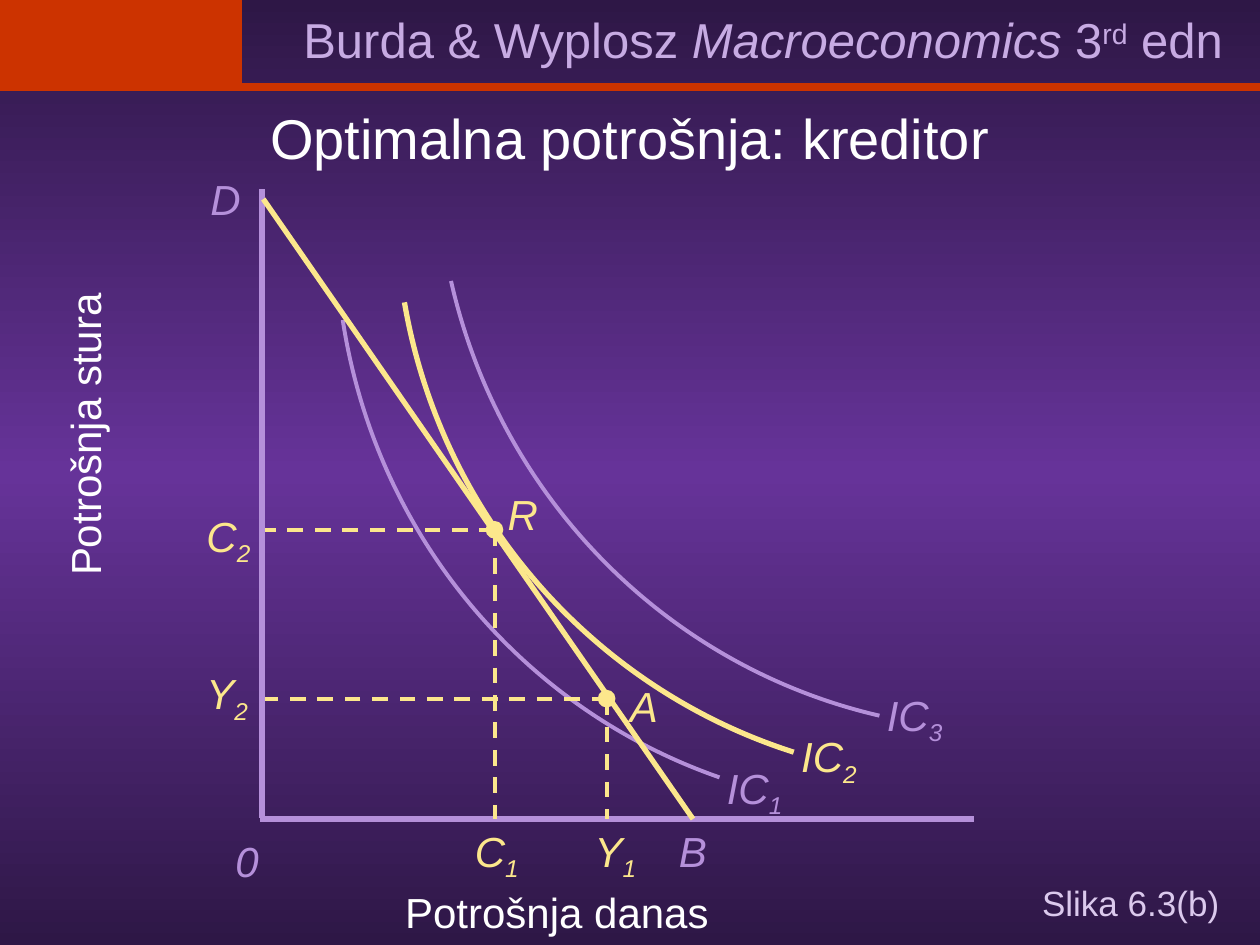
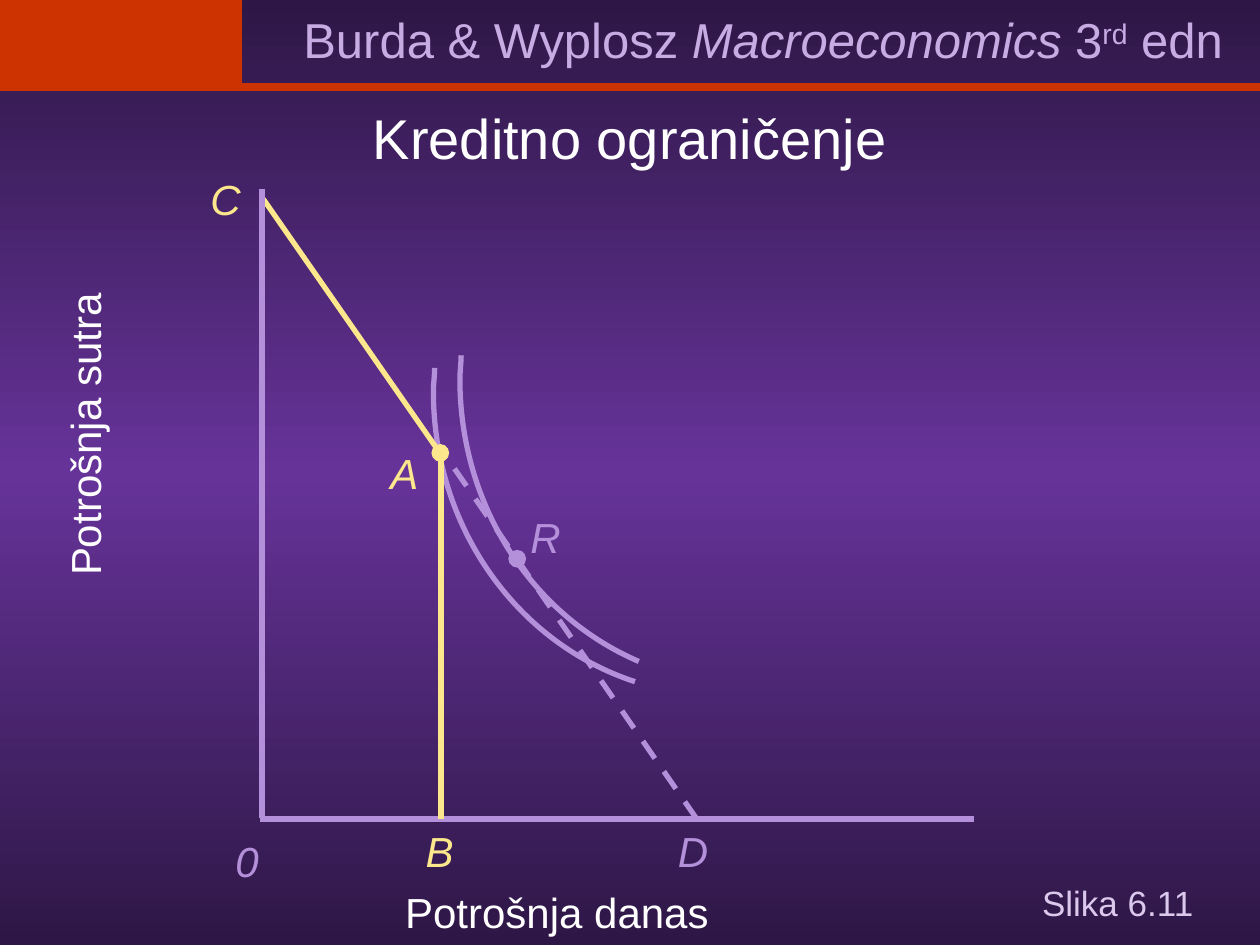
from copy import deepcopy

from lxml.etree import SubElement
from pptx import Presentation
from pptx.dml.color import RGBColor
from pptx.enum.dml import MSO_LINE
from pptx.enum.shapes import MSO_CONNECTOR, MSO_SHAPE
from pptx.enum.text import MSO_ANCHOR, PP_ALIGN
from pptx.oxml.ns import qn
from pptx.util import Inches, Pt

DARK_PURPLE = RGBColor(0x2E, 0x17, 0x46)
PURPLE = RGBColor(0x66, 0x33, 0x99)
LILAC = RGBColor(0xB5, 0x90, 0xDA)
HEADER_LILAC = RGBColor(0xC7, 0xAB, 0xE3)
PALE_LILAC = RGBColor(0xDB, 0xC9, 0xED)
YELLOW = RGBColor(0xFC, 0xE7, 0x8C)
RED = RGBColor(0xCC, 0x33, 0x00)
WHITE = RGBColor(0xFF, 0xFF, 0xFF)

HEADER = {"name": "Arial", "size": Pt(28), "color": HEADER_LILAC}
HEADING = {"name": "Arial", "size": Pt(32), "color": WHITE}
AXIS_NAME = {**HEADING, "size": Pt(24)}
FIGURE_NUMBER = {"name": "Arial", "size": Pt(20), "color": PALE_LILAC}
LABEL = {"name": "Arial", "size": Pt(24), "italic": True}


def place(shape, left, top, width, height):
    frame = {"left": left, "top": top, "width": width, "height": height}
    for name, value in frame.items():
        setattr(shape, name, Inches(value))


def add_span(para, text, style, baseline=0):
    span = para.add_run()
    span.text = text
    for name, value in style.items():
        if name == "color":
            span.font.color.rgb = value
        else:
            setattr(span.font, name, value)
    if baseline:
        span._r.get_or_add_rPr().set("baseline", str(baseline * 1000))


def add_box(page, area, align=PP_ALIGN.CENTER, anchor=MSO_ANCHOR.TOP):
    box = page.shapes.add_textbox(*map(Inches, area))
    box.text_frame.word_wrap = True
    box.text_frame.vertical_anchor = anchor
    box.text_frame.paragraphs[0].alignment = align
    return box


def add_label(page, text, left, top, color, width=0.58, align=PP_ALIGN.CENTER):
    letter, _, index = text.partition("_")
    if index:
        align = PP_ALIGN.LEFT
    box = add_box(page, (left, top, width, 0.5), align)
    para = box.text_frame.paragraphs[0]
    add_span(para, letter, {**LABEL, "color": color})
    if index:
        add_span(para, index, {**LABEL, "color": color}, -25)


def add_line(page, start, end, color, weight=3, dashed=False):
    line = page.shapes.add_connector(
        MSO_CONNECTOR.STRAIGHT, *map(Inches, (*start, *end)))
    line.line.color.rgb = color
    line.line.width = Pt(weight)
    if dashed:
        line.line.dash_style = MSO_LINE.DASH
    SubElement(line.element.spPr, qn("a:effectLst"))
    return line


def add_curve(page, points, color, weight=3):
    start, *rest = [tuple(map(Inches, point)) for point in points]
    builder = page.shapes.build_freeform(*start)
    builder.add_line_segments(rest, close=False)
    curve = builder.convert_to_shape()
    curve.shadow.inherit = False
    curve.fill.background()
    curve.line.color.rgb = color
    curve.line.width = Pt(weight)
    outline = next(curve.element.iter(qn("a:path")))
    segments = outline.findall(qn("a:lnTo"))
    for first in range(0, len(segments), 3):
        bezier = SubElement(outline, qn("a:cubicBezTo"))
        for segment in segments[first:first + 3]:
            bezier.append(segment[0])
            outline.remove(segment)


def add_solid(page, kind, area, color):
    solid = page.shapes.add_shape(kind, *map(Inches, area))
    solid.shadow.inherit = False
    solid.fill.solid()
    solid.fill.fore_color.rgb = color
    solid.line.fill.background()
    return solid


def add_dot(page, left, top, color):
    dot = add_solid(page, MSO_SHAPE.OVAL, (left, top, 0.13, 0.13), color)
    dot.line.color.rgb = color
    dot.line.width = Pt(0.75)


def add_header(page):
    header = add_box(page, (2.31, 0.03, 7.67, 0.57), PP_ALIGN.LEFT)
    para = header.text_frame.paragraphs[0]
    add_span(para, "Burda & Wyplosz ", HEADER)
    add_span(para, "Macroeconomics", {**HEADER, "italic": True})
    add_span(para, " 3", HEADER)
    add_span(para, "rd", HEADER, 30)
    add_span(para, " edn", HEADER)
    return header


def dress_layout(layout, page):
    fill = layout.background.fill
    fill.gradient()
    fill.gradient_angle = 90
    stops = next(layout.element.iter(qn("a:gsLst")))
    stops.append(deepcopy(stops[0]))
    colors = (DARK_PURPLE, PURPLE, DARK_PURPLE)
    for number, (stop, color) in enumerate(zip(fill.gradient_stops, colors)):
        stop.position = number / 2
        stop.color.rgb = color
    band = add_line(page, (0, 0.69), (10, 0.69), RED, 4.5)
    corner = add_solid(page, MSO_SHAPE.RECTANGLE, (0, 0, 1.92, 0.67), RED)
    for shape in (band, add_header(page), corner):
        layout.shapes.element.append(shape.element)


def add_frame(page, heading, figure, vertical_name):
    title = page.shapes.title
    place(title, 8.17, 6.83, 1.83, 0.67)
    title.text_frame.vertical_anchor = MSO_ANCHOR.MIDDLE
    title.text_frame.paragraphs[0].alignment = PP_ALIGN.LEFT
    add_span(title.text_frame.paragraphs[0], figure, FIGURE_NUMBER)
    box = add_box(page, (0.02, 0.75, 9.96, 0.67), anchor=MSO_ANCHOR.MIDDLE)
    add_span(box.text_frame.paragraphs[0], heading, HEADING)
    for name, area, angle in (
            ("Potrošnja danas", (2.67, 6.99, 3.5, 0.5), 0),
            (vertical_name, (-1.2, 3.2, 3.74, 0.5), 270)):
        box = add_box(page, area)
        box.rotation = angle
        add_span(box.text_frame.paragraphs[0], name, AXIS_NAME)
    add_label(page, "0", 1.67, 6.58, LILAC)


def add_axes(page):
    add_line(page, (2.08, 1.5), (2.08, 6.49), LILAC)
    add_line(page, (2.06, 6.5), (7.73, 6.5), LILAC)


def build_lender(page):
    add_frame(page, "Optimalna potrošnja: kreditor", "Slika 6.3(b)",
              "Potrošnja stura")
    add_axes(page)
    for points, color, weight in (
            (((2.72, 2.54), (2.98, 4.23), (4.13, 5.62), (5.71, 6.17)), LILAC, 2.25),
            (((3.21, 2.4), (3.5, 4.09), (4.7, 5.46), (6.3, 5.97)), YELLOW, 3),
            (((3.58, 2.23), (3.97, 3.95), (5.29, 5.29), (6.98, 5.68)), LILAC, 2.25)):
        add_curve(page, points, color, weight)
    add_line(page, (5.5, 6.5), (2.09, 1.58), YELLOW)
    for x, y in ((3.93, 4.21), (4.82, 5.55)):
        add_line(page, (x, y), (2.1, y), YELLOW, 2.25, True)
        add_line(page, (x, y), (x, 6.5), YELLOW, 2.25, True)
        add_dot(page, x - 0.07, y - 0.07, YELLOW)
    for text, left, top, color in (
            ("R", 3.86, 3.83, YELLOW), ("A", 4.82, 5.35, YELLOW),
            ("B", 5.21, 6.5, LILAC), ("D", 1.5, 1.33, LILAC)):
        add_label(page, text, left, top, color)
    for text, left, top, color in (
            ("Y_1", 4.62, 6.5, YELLOW), ("Y_2", 1.54, 5.25, YELLOW),
            ("C_1", 3.67, 6.5, YELLOW), ("C_2", 1.54, 4, YELLOW),
            ("IC_1", 5.67, 6, LILAC), ("IC_2", 6.26, 5.75, YELLOW),
            ("IC_3", 6.94, 5.42, LILAC)):
        add_label(page, text, left, top, color, 0.75)


def build_constraint(page):
    add_frame(page, "Kreditno ograničenje", "Slika 6.11", "Potrošnja sutra")
    add_curve(page, ((3.45, 2.92), (3.45, 2.98), (3.44, 3.04), (3.44, 3.11),
                     (3.44, 4.17), (4.09, 5.1), (5.04, 5.41)), LILAC)
    add_line(page, (5.53, 6.5), (3.49, 3.55), LILAC, dashed=True)
    add_line(page, (3.46, 3.55), (2.09, 1.58), YELLOW)
    add_axes(page)
    add_line(page, (3.5, 3.58), (3.5, 6.5), YELLOW)
    add_curve(page, ((3.66, 2.82), (3.66, 2.88), (3.65, 2.95), (3.65, 3.01),
                     (3.65, 4), (4.21, 4.88), (5.07, 5.25)), LILAC)
    add_dot(page, 3.43, 3.53, YELLOW)
    add_dot(page, 4.04, 4.37, LILAC)
    for text, left, top, color in (
            ("R", 4.04, 4.01, LILAC), ("A", 2.92, 3.5, YELLOW),
            ("D", 5.21, 6.5, LILAC), ("C", 1.5, 1.33, YELLOW)):
        add_label(page, text, left, top, color)
    add_label(page, "B", 3.28, 6.5, YELLOW, 0.63, PP_ALIGN.LEFT)


def main():
    deck = Presentation()
    deck.slide_width = Inches(10)
    deck.slide_height = Inches(7.5)
    layout = deck.slide_layouts[5]
    lender, constraint = [deck.slides.add_slide(layout) for _ in range(2)]
    dress_layout(layout, lender)
    build_lender(lender)
    build_constraint(constraint)
    deck.save("out.pptx")


if __name__ == "__main__":
    main()
